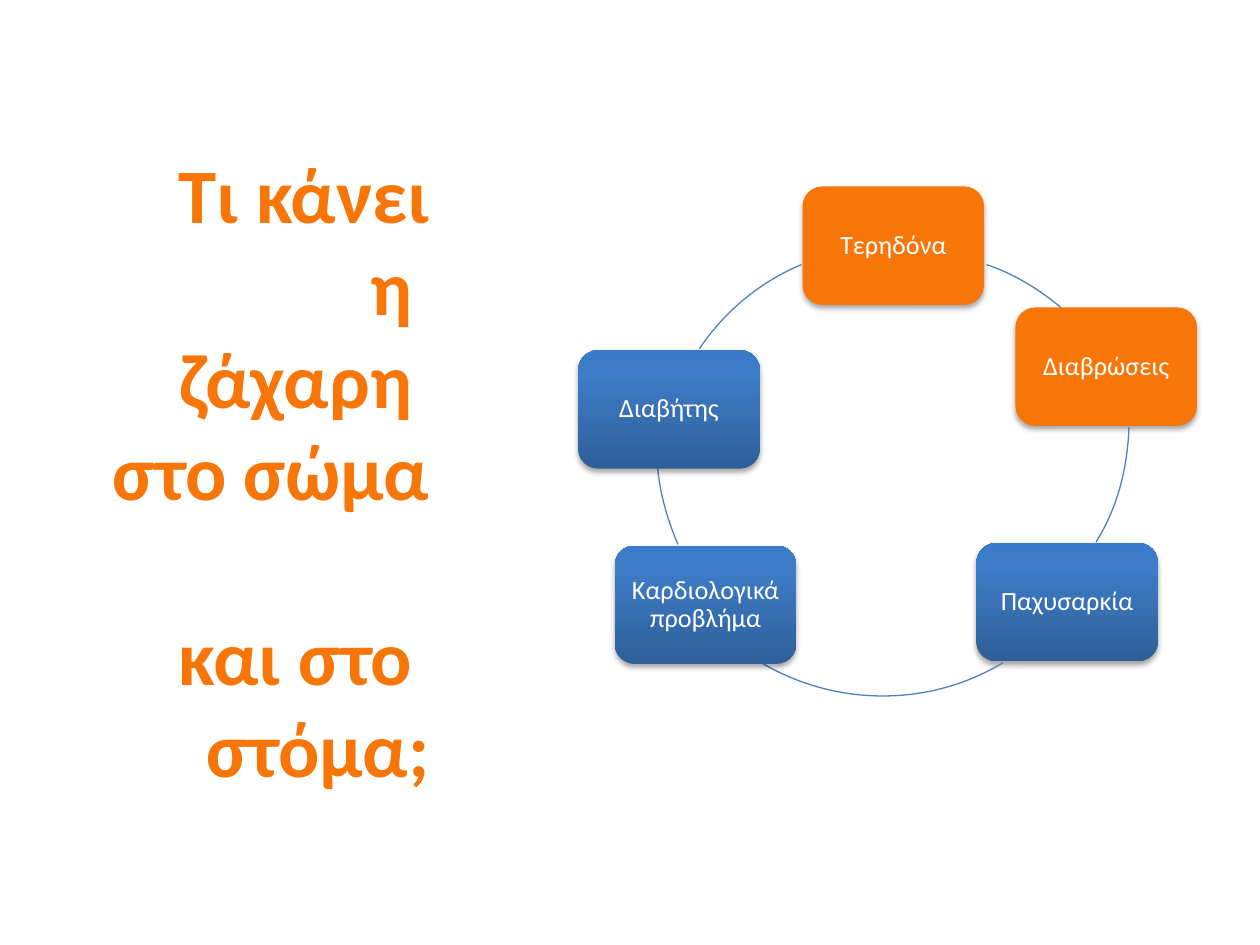
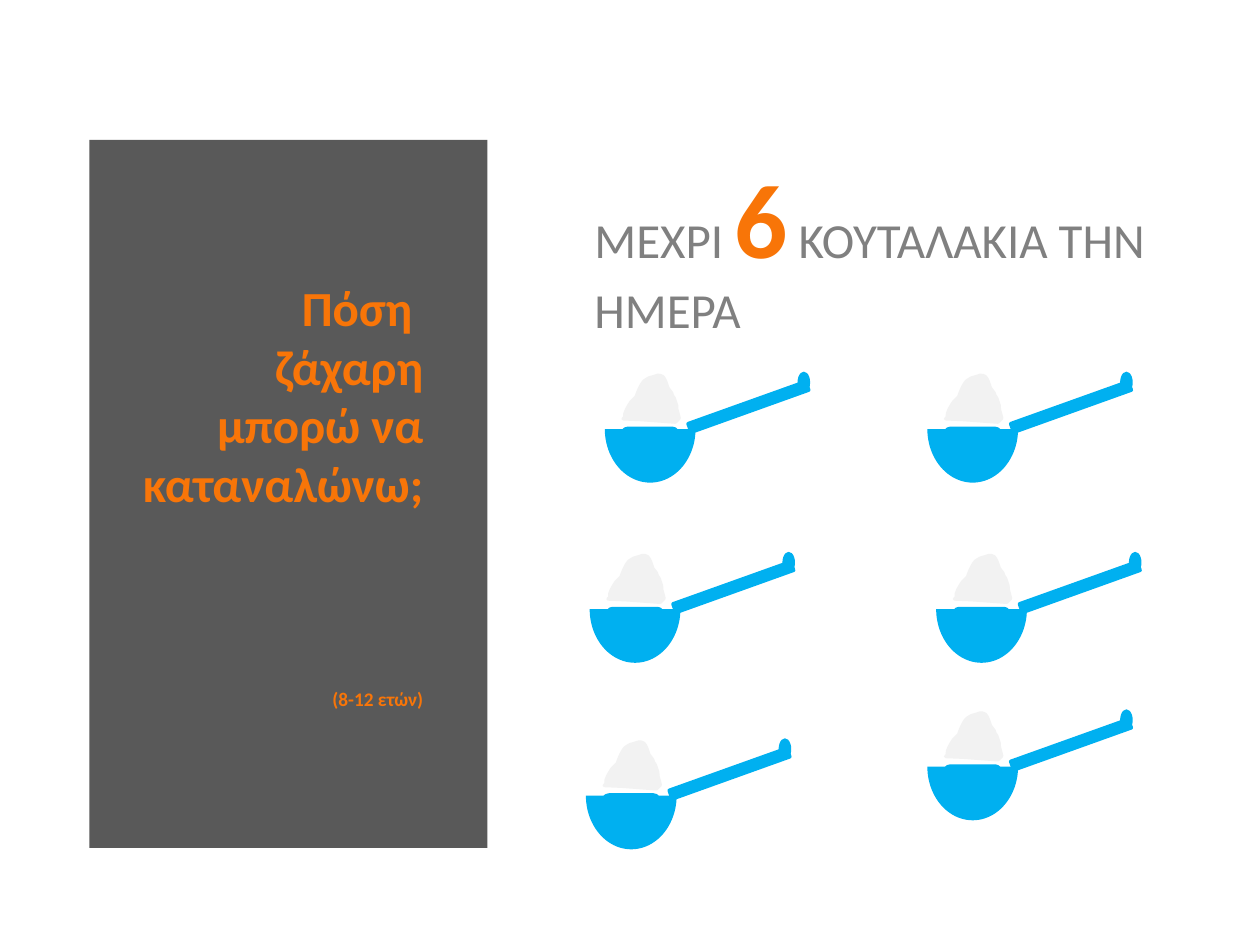
"""Build two slides on what sugar does to the body and how much of it is allowed."""
from copy import deepcopy
from dataclasses import dataclass

from lxml import etree
from pptx import Presentation
from pptx.dml.color import RGBColor
from pptx.enum.shapes import MSO_SHAPE
from pptx.enum.text import MSO_ANCHOR, PP_ALIGN
from pptx.oxml.ns import qn
from pptx.util import Emu, Pt

ROUND_RECT, RECT, OVAL = MSO_SHAPE.ROUNDED_RECTANGLE, MSO_SHAPE.RECTANGLE, MSO_SHAPE.OVAL
BLOCK_ARC = MSO_SHAPE.BLOCK_ARC
LEFT, CENTER, RIGHT = PP_ALIGN.LEFT, PP_ALIGN.CENTER, PP_ALIGN.RIGHT
TOP, MIDDLE = MSO_ANCHOR.TOP, MSO_ANCHOR.MIDDLE


@dataclass(frozen=True)
class Theme:
    """Colours, font and type styles (size, colour, bold)."""
    font: str = "Calibri"
    orange: str = "F87508"
    ring: str = "4F81BD"
    panel: str = "595959"
    sugar: str = "F2F2F2"
    spoon: str = "00B0F0"
    blue: tuple = ((0, "2F5F99"), (0.8, "3D7CC7"), (1, "3A7CCB"))
    title: tuple = (44, "F87508", True)
    question: tuple = (28, "F87508", True)
    age: tuple = (11, "F87508", True)
    effect: tuple = (15, "FFFFFF", False)
    limit: tuple = (28, "808080", False)
    number: tuple = (60, "F87508", True)


THEME = Theme()
PX = 9144
SLIDE_SIZE = (1000, 750)

TITLE = "Τι κάνει\nη \nζάχαρη \nστο σώμα \nκαι στο \nστόμα;"
TITLE_BOX = (71, 111, 280, 524)
EFFECT_SIZE = (144, 94)
EFFECTS = [
    ("Τερηδόνα", (637, 148), THEME.orange),
    ("Διαβρώσεις", (806, 244), THEME.orange),
    ("Παχυσαρκία", (775, 431), THEME.blue),
    ("Καρδιολογικά προβλήμα", (488, 433), THEME.blue),
    ("Διαβήτης", (459, 278), THEME.blue),
]
RING_SIZE = (375, 375)
RING_ARCS = [
    ((533, 199), (250, 11), ((271, 18), (291, 30), (309, 45))),
    ((521, 148), (375, 191), ((374, 223), (366, 255), (349, 282))),
    ((512, 177), (284, 349), ((226, 384), (153, 384), (94, 350))),
    ((522, 167), (16, 265), ((8, 246), (2, 226), (0, 205))),
    ((522, 195), (33, 82), ((53, 52), (81, 29), (114, 15))),
]

QUESTION = "Πόση \nζάχαρη\nμπορώ να καταναλώνω;"
AGE = "(8-12 ετών)"
AGE_GAP = 100
QUESTION_BOX = (71, 111, 316, 562)
LIMIT = [("ΜΕΧΡΙ ", THEME.limit), ("6", THEME.number),
         (" ΚΟΥΤΑΛΑΚΙΑ ΤΗΝ ΗΜΕΡΑ", THEME.limit)]
LIMIT_BOX = (462, 117, 520, 158)
SPOONS = [(495, 298), (751, 298), (758, 441), (483, 441), (751, 566), (480, 589)]
SUGAR_SIZE = (44, 37)
SUGAR_START = (1, 33)
SUGAR_OUTLINE = [
    ((0, 30), (4, 24), (6, 21)), ((7, 20), (9, 18), (10, 17)),
    ((11, 14), (14, 6), (17, 4)), ((19, 2), (21, 2), (24, 1)),
    ((27, 0),), ((28, 0), (30, 0), (31, 1)), ((33, 3), (34, 7), (35, 10)),
    ((38, 14),), ((38, 15), (39, 17), (40, 18)), ((42, 24),),
    ((42, 26), (42, 28), (43, 30)), ((43, 31), (44, 33), (44, 34)),
    ((43, 36), (42, 36), (41, 37)), ((14, 35),), ((-8, 34), (2, 35), (1, 33)),
]
SPOON_PARTS = [
    (OVAL, (138, -3, 10, 17), 0, 0),
    (BLOCK_ARC, (-15, 0, 72, 85), 180, 0),
    (ROUND_RECT, (48, 20, 102, 10), 340.3, 0),
    (ROUND_RECT, (-1, 42, 44, 26), 0, 2),
]


def rgb(colour):
    return RGBColor.from_string(colour)


def emu(lengths):
    return [Emu(length * PX) for length in lengths]


def paint(shape, fill=None, line=None, width=0):
    """Set fill (none, plain or gradient) and outline, without shadow."""
    shape.shadow.inherit = False
    if fill is None:
        shape.fill.background()
    elif isinstance(fill, str):
        shape.fill.solid()
        shape.fill.fore_color.rgb = rgb(fill)
    else:
        shape.fill.gradient()
        shape.fill.gradient_angle = 90
        stops = shape._element.spPr.find(qn("a:gradFill")).find(qn("a:gsLst"))
        while len(stops) < len(fill):
            stops.append(deepcopy(stops[0]))
        for stop, (position, colour) in zip(shape.fill.gradient_stops, fill):
            stop.position = position
            stop.color.rgb = rgb(colour)
    if width:
        shape.line.color.rgb = rgb(line)
        shape.line.width = Pt(width)
    else:
        shape.line.fill.background()
    return shape


def add_soft_shadow(shape):
    effects = shape._element.spPr.find(qn("a:effectLst"))
    shadow = etree.SubElement(effects, qn("a:outerShdw"), blurRad="40000",
                              dist="23000", dir="5400000", rotWithShape="0")
    black = etree.SubElement(shadow, qn("a:srgbClr"), val="000000")
    etree.SubElement(black, qn("a:alpha"), val="35000")


def write(shape, paragraphs, align=LEFT, anchor=TOP, insets=(10, 5, 10, 5),
          spacing=None, gap=0):
    """Write paragraphs of (text, style) runs; gap in points parts the paragraphs."""
    frame = shape.text_frame
    frame.word_wrap = True
    frame.vertical_anchor = anchor
    (frame.margin_left, frame.margin_top,
     frame.margin_right, frame.margin_bottom) = emu(insets)
    for index, runs in enumerate(paragraphs):
        paragraph = frame.add_paragraph() if index else frame.paragraphs[0]
        paragraph.alignment = align
        if spacing:
            paragraph.line_spacing = spacing
        if index:
            paragraph.space_before = Pt(gap)
        for text, (size, colour, bold) in runs:
            for number, words in enumerate(text.split("\n")):
                if number:
                    paragraph.add_line_break()
                    paragraph._p[-1].append(deepcopy(run._r.rPr))
                run = paragraph.add_run()
                run.text = words
                run.font.name = THEME.font
                run.font.size = Pt(size)
                run.font.bold = bold
                run.font.color.rgb = rgb(colour)


def add_curve(shapes, corner, size, start, segments, close=False):
    """Draw one-point lines and three-point curves inside a box."""
    builder = shapes.build_freeform(0, 0, scale=PX)
    builder.add_line_segments([size], close=False)
    shape = builder.convert_to_shape(*emu(corner))
    outline = next(shape._element.iter(qn("a:path")))
    for step in list(outline):
        outline.remove(step)
    kinds = {1: "a:lnTo", 3: "a:cubicBezTo"}
    steps = [("a:moveTo", (start,))] + [(kinds[len(points)], points) for points in segments]
    for kind, points in steps:
        step = etree.SubElement(outline, qn(kind))
        for x, y in points:
            etree.SubElement(step, qn("a:pt"), x=str(x), y=str(y))
    if close:
        etree.SubElement(outline, qn("a:close"))
    return shape


def add_spoon(shapes, left, top):
    heap = add_curve(shapes, (left, top), SUGAR_SIZE, SUGAR_START, SUGAR_OUTLINE, close=True)
    paint(heap, THEME.sugar, THEME.sugar, 2)
    for kind, (x, y, width, height), angle, outline in SPOON_PARTS:
        part = shapes.add_shape(kind, *emu((left + x, top + y, width, height)))
        part.rotation = angle
        if kind == BLOCK_ARC:
            part.adjustments[2] = 0.5
        paint(part, THEME.spoon, THEME.spoon, outline)


def build_effects(slide):
    shapes = slide.shapes
    write(shapes.add_textbox(*emu(TITLE_BOX)), [[(TITLE, THEME.title)]],
          align=RIGHT, anchor=MIDDLE)
    for (effect, place, fill), (corner, start, bend) in zip(EFFECTS, RING_ARCS):
        card = paint(shapes.add_shape(ROUND_RECT, *emu(place + EFFECT_SIZE)), fill)
        add_soft_shadow(card)
        write(card, [[(effect, THEME.effect)]], align=CENTER, anchor=MIDDLE,
              insets=(2, 2, 2, 2), spacing=0.9)
        arc = add_curve(shapes, corner, RING_SIZE, start, [bend])
        paint(arc, None, THEME.ring, 0.75)


def build_limit(slide):
    shapes = slide.shapes
    panel = paint(shapes.add_shape(RECT, *emu(QUESTION_BOX)), THEME.panel)
    write(panel, [[(QUESTION, THEME.question)], [(AGE, THEME.age)]], align=RIGHT,
          anchor=MIDDLE, insets=(28, 5, 51, 5), gap=AGE_GAP)
    write(shapes.add_textbox(*emu(LIMIT_BOX)), [LIMIT])
    for left, top in SPOONS:
        add_spoon(shapes, left, top)


def main():
    deck = Presentation()
    deck.slide_width, deck.slide_height = emu(SLIDE_SIZE)
    for build in (build_effects, build_limit):
        build(deck.slides.add_slide(deck.slide_layouts[6]))
    deck.save("out.pptx")


if __name__ == "__main__":
    main()
